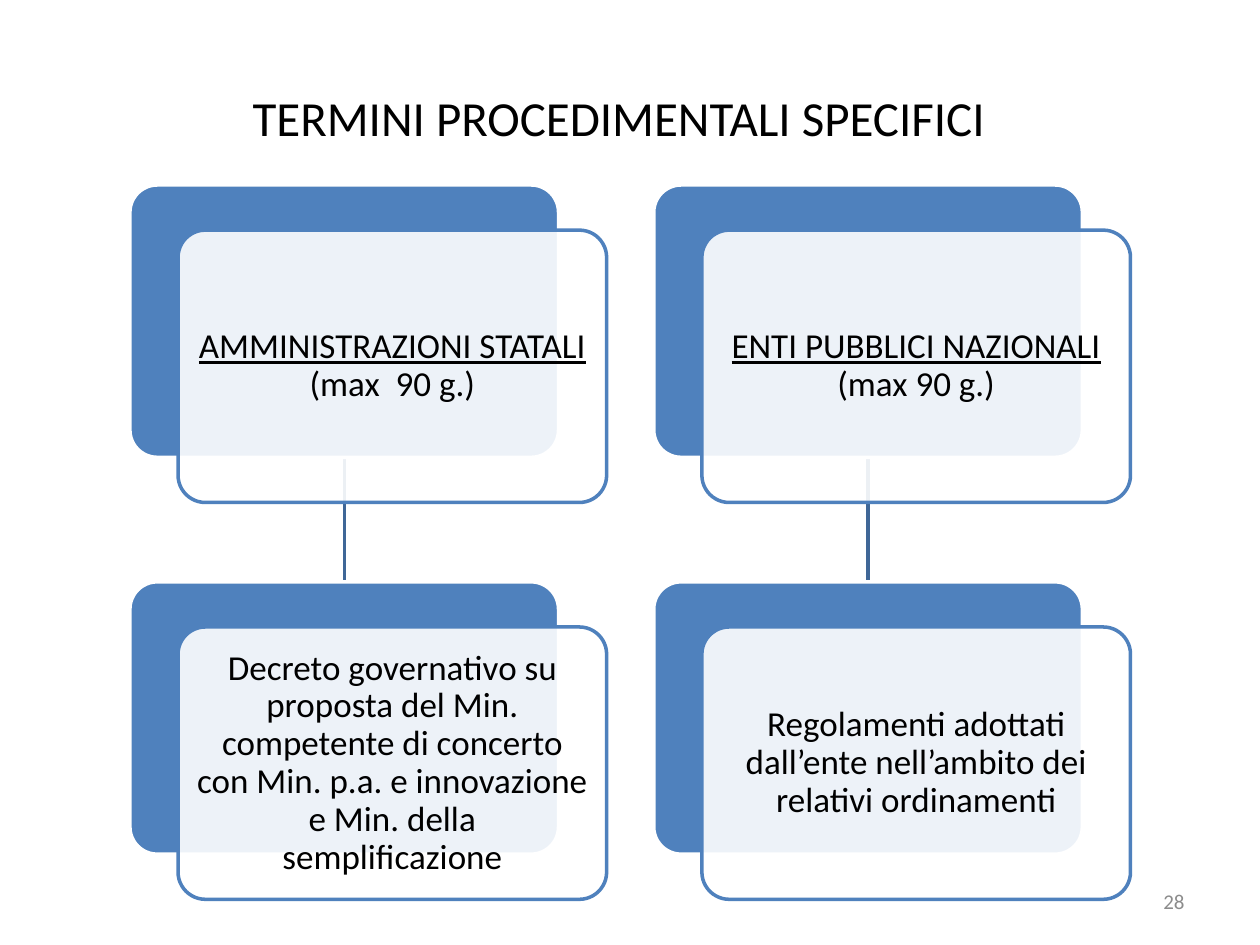
"""Build the slide on specific procedural terms: two columns of linked cards."""
from dataclasses import dataclass

from lxml.etree import SubElement
from pptx import Presentation
from pptx.dml.color import RGBColor
from pptx.enum.shapes import MSO_CONNECTOR as Link, MSO_SHAPE as Form
from pptx.enum.text import MSO_ANCHOR as Anchor, PP_ALIGN as Align
from pptx.oxml.ns import qn
from pptx.util import Cm, Pt

BLUE, DARK, WHITE, BLACK, GREY = "4F81BD", "3F6797", "FFFFFF", "000000", "8C8C8C"
LEFT, TOP, COL, ROW = 2.62, 3.73, 10.56, 8.0
WIDE, HIGH = 8.64, 5.49
SHIFT_X, SHIFT_Y, INSET = 0.97, 0.91, 0.16


@dataclass(frozen=True)
class Box:
    x: float
    y: float
    w: float
    h: float


@dataclass(frozen=True)
class Run:
    text: str
    under: bool = False


@dataclass(frozen=True)
class Card:
    col: int
    row: int
    runs: tuple[Run, ...]


CARDS = (
    Card(0, 0, (Run("AMMINISTRAZIONI STATALI ", True), Run("(max  90 g.)"))),
    Card(0, 1, (Run("Decreto governativo su proposta del Min. competente di concerto "
                    "con Min. p.a. e innovazione e Min. della semplificazione"),)),
    Card(1, 0, (Run("ENTI PUBBLICI NAZIONALI ", True), Run("(max 90 g.)"))),
    Card(1, 1, (Run("Regolamenti adottati dall’ente nell’ambito dei relativi ordinamenti"),)),
)


def tint(hue: str) -> RGBColor:
    return RGBColor.from_string(hue)


def apply(target, style: dict) -> None:
    for name, value in style.items():
        setattr(target, name, value)


def place(box: Box) -> tuple:
    return Cm(box.x), Cm(box.y), Cm(box.w), Cm(box.h)


def write(slide, box: Box, runs: tuple[Run, ...], size: int, hue: str = BLACK,
          align=Align.CENTER, gap: float = 1.0, **frame) -> None:
    text = slide.shapes.add_textbox(*place(box)).text_frame
    apply(text, {"word_wrap": True, "vertical_anchor": Anchor.MIDDLE, **frame})
    para = text.paragraphs[0]
    apply(para, {"alignment": align, "line_spacing": gap})
    for item in runs:
        run = para.add_run()
        run.text = item.text
        apply(run.font, {"name": "Calibri", "size": Pt(size), "underline": item.under})
        run.font.color.rgb = tint(hue)


def panel(slide, box: Box, fill: str, line: str, solid: int = 100) -> None:
    shape = slide.shapes.add_shape(Form.ROUNDED_RECTANGLE, *place(box))
    shape.adjustments[0] = 0.1
    shape.shadow.inherit = False
    shape.fill.solid()
    shape.fill.fore_color.rgb = tint(fill)
    shape.line.color.rgb = tint(line)
    shape.line.width = Pt(2)
    if solid < 100:
        hue = shape._element.spPr.find(qn("a:solidFill"))[0]
        SubElement(hue, qn("a:alpha")).set("val", str(solid * 1000))


def link(slide, col: int) -> None:
    x = Cm(LEFT + col * COL + WIDE / 2)
    line = slide.shapes.add_connector(Link.STRAIGHT, x, Cm(TOP + HIGH), x, Cm(TOP + ROW))
    line.line.color.rgb = tint(DARK)
    line.line.width = Pt(2)
    SubElement(line._element.spPr, qn("a:effectLst"))


def draw(slide, card: Card) -> None:
    x, y = LEFT + card.col * COL, TOP + card.row * ROW
    panel(slide, Box(x, y, WIDE, HIGH), BLUE, WHITE)
    x, y = x + SHIFT_X, y + SHIFT_Y
    panel(slide, Box(x, y, WIDE, HIGH), WHITE, BLUE, 90)
    inner = Box(x + INSET, y + INSET, WIDE - 2 * INSET, HIGH - 2 * INSET)
    sides = ("left", "top", "right", "bottom")
    write(slide, inner, card.runs, 20, gap=0.9,
          **{f"margin_{side}": Cm(0.2) for side in sides})


def main() -> None:
    deck = Presentation()
    apply(deck, {"slide_width": Cm(25.4), "slide_height": Cm(19.05)})
    slide = deck.slides.add_slide(deck.slide_layouts[6])
    write(slide, Box(1.27, 0.76, 22.86, 3.18),
          (Run("TERMINI PROCEDIMENTALI SPECIFICI"),), 28, margin_right=Cm(0.71))
    for col in (1, 0):
        link(slide, col)
    for card in CARDS:
        draw(slide, card)
    write(slide, Box(18.2, 17.65, 5.93, 1.02), (Run("28"),), 12, GREY, Align.RIGHT)
    deck.save("out.pptx")


if __name__ == "__main__":
    main()
